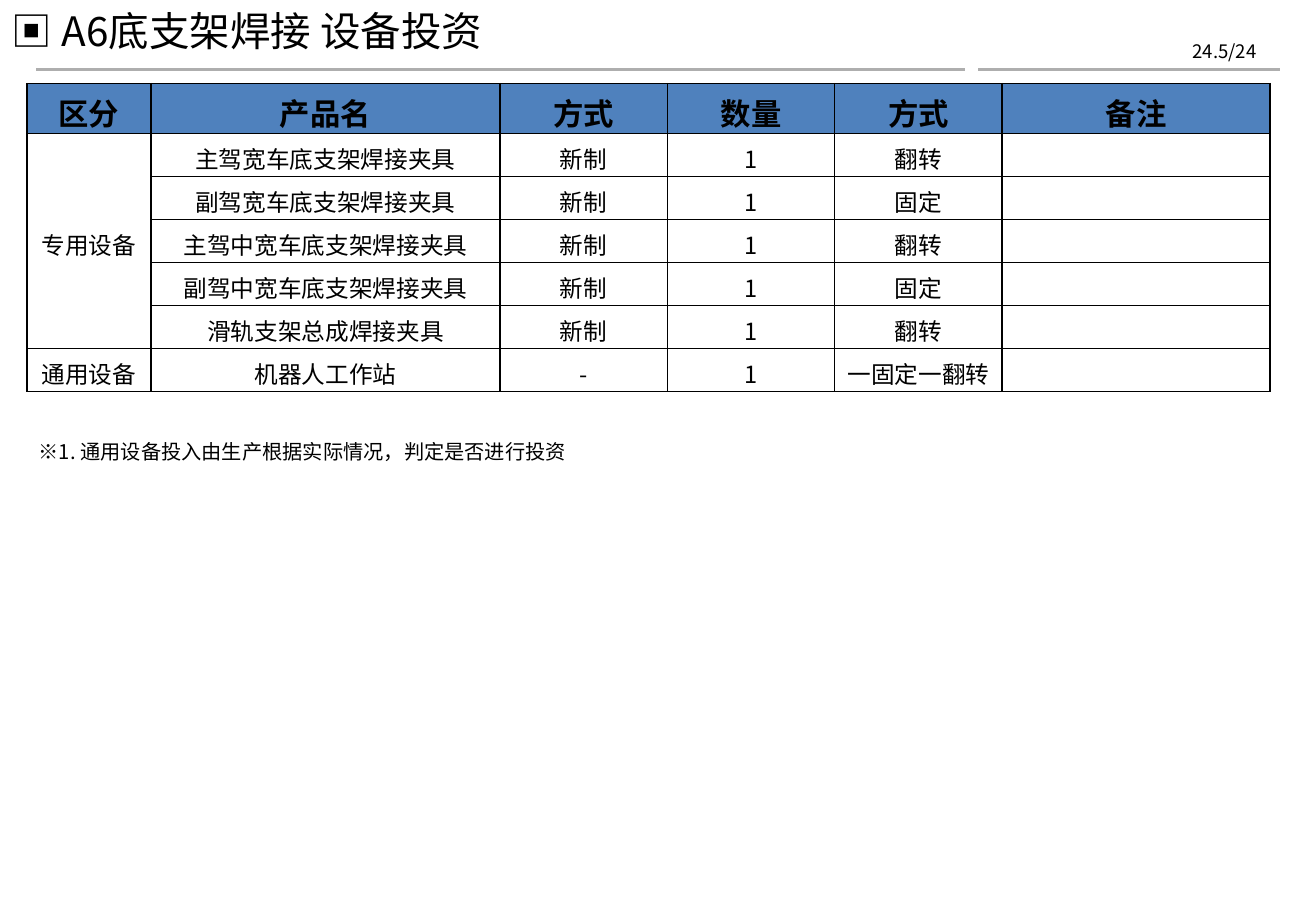
"""Build the equipment investment slide for the A6 lower bracket welding line."""
from lxml import etree
from pptx import Presentation
from pptx.dml.color import RGBColor
from pptx.enum.shapes import MSO_CONNECTOR
from pptx.enum.text import MSO_ANCHOR, PP_ALIGN
from pptx.oxml.ns import qn
from pptx.util import Cm, Pt

LEFT, CENTER, RIGHT = PP_ALIGN.LEFT, PP_ALIGN.CENTER, PP_ALIGN.RIGHT
TOP, MIDDLE = MSO_ANCHOR.TOP, MSO_ANCHOR.MIDDLE
STRAIGHT = MSO_CONNECTOR.STRAIGHT

HEADS = ["区分", "产品名", "方式", "数量", "方式", "备注"]
GROUPS = [
    ("专用设备", [
        ("主驾宽车底支架焊接夹具", "新制", "1", "翻转"),
        ("副驾宽车底支架焊接夹具", "新制", "1", "固定"),
        ("主驾中宽车底支架焊接夹具", "新制", "1", "翻转"),
        ("副驾中宽车底支架焊接夹具", "新制", "1", "固定"),
        ("滑轨支架总成焊接夹具", "新制", "1", "翻转"),
    ]),
    ("通用设备", [("机器人工作站", "-", "1", "一固定一翻转")]),
]
THEME = {
    "ink": "000000", "rule": "AEAEAE", "head": "4F81BD",
    "font": "Noto Sans CJK SC", "date_font": "Noto Sans CJK KR",
    "title": 24, "head_size": 18, "body": 14, "note": 12, "date": 11,
    "rule_width": 2, "border": 1,
}
TEXTS = [
    ("24.5/24", (23.75, 0.69, 2.77, 0.74), "date", "date_font", RIGHT),
    ("▣ A6底支架焊接 设备投资", (0, 0, 23.16, 1.27), "title", "font", LEFT),
    ("※1. 通用设备投入由生产根据实际情况，判定是否进行投资",
     (0.56, 9.07, 24.61, 0.76), "note", "font", LEFT),
]
RULES = [(0.76, 20.17), (20.45, 26.75)]
RULE_Y = 1.45
TABLE_X, TABLE_Y = 0.56, 1.75
COLS = [2.6, 7.29, 3.5, 3.5, 3.5, 5.6]
HEAD_H, ROW_H = 1.04, 0.9
PAD_X, PAD_TOP = 0.1, 0.13


def write(frame, text, size, font="font", align=CENTER, bold=False):
    frame.text = text
    para = frame.paragraphs[0]
    para.alignment = align
    for run in para.runs:
        run.font.size = Pt(THEME[size])
        run.font.bold = bold
        run.font.name = THEME[font]
        run.font.color.rgb = RGBColor.from_string(THEME["ink"])
        east = etree.SubElement(run.font._element, qn("a:ea"))
        east.set("typeface", THEME[font])


def add_text(slide, text, box, size, font, align):
    frame = slide.shapes.add_textbox(*map(Cm, box)).text_frame
    frame.word_wrap = True
    frame.vertical_anchor = MIDDLE
    frame.margin_top = frame.margin_bottom = 0
    write(frame, text, size, font, align)


def add_rule(slide, start, end):
    line = slide.shapes.add_connector(
        STRAIGHT, Cm(start), Cm(RULE_Y), Cm(end), Cm(RULE_Y))
    line.line.color.rgb = RGBColor.from_string(THEME["rule"])
    line.line.width = Pt(THEME["rule_width"])
    etree.SubElement(line._element.spPr, qn("a:effectLst"))


def add_border(cell):
    props = cell._tc.get_or_add_tcPr()
    for i, side in enumerate(("lnL", "lnR", "lnT", "lnB")):
        edge = etree.Element(qn("a:" + side), w=str(Pt(THEME["border"])))
        fill = etree.SubElement(edge, qn("a:solidFill"))
        etree.SubElement(fill, qn("a:srgbClr"), val=THEME["ink"])
        props.insert(i, edge)


def style_cell(cell, head):
    cell.margin_left = cell.margin_right = Cm(PAD_X)
    cell.margin_top, cell.margin_bottom = Cm(PAD_TOP), 0
    cell.vertical_anchor = TOP if head else MIDDLE
    if head:
        cell.fill.solid()
        cell.fill.fore_color.rgb = RGBColor.from_string(THEME["head"])
    else:
        cell.fill.background()
    add_border(cell)


def add_grid(slide):
    count = sum(len(items) for _, items in GROUPS)
    table = slide.shapes.add_table(
        count + 1, len(COLS), Cm(TABLE_X), Cm(TABLE_Y),
        Cm(sum(COLS)), Cm(HEAD_H + count * ROW_H)).table
    table.horz_banding = False
    table.first_row = False
    for col, width in zip(table.columns, COLS):
        col.width = Cm(width)
    for r, row in enumerate(table.rows):
        row.height = Cm(ROW_H if r else HEAD_H)
        for cell in row.cells:
            style_cell(cell, r == 0)
    for c, text in enumerate(HEADS):
        write(table.cell(0, c).text_frame, text, "head_size", bold=True)
    top = 1
    for name, items in GROUPS:
        first = table.cell(top, 0)
        if len(items) > 1:
            first.merge(table.cell(top + len(items) - 1, 0))
        write(first.text_frame, name, "body")
        for r, item in enumerate(items, top):
            for c, text in enumerate(item, 1):
                write(table.cell(r, c).text_frame, text, "body")
        top += len(items)


def main():
    deck = Presentation()
    deck.slide_width, deck.slide_height = Cm(27.51), Cm(19.05)
    slide = deck.slides.add_slide(deck.slide_layouts[6])
    for start, end in RULES:
        add_rule(slide, start, end)
    for entry in TEXTS:
        add_text(slide, *entry)
    add_grid(slide)
    deck.save("out.pptx")


if __name__ == "__main__":
    main()
